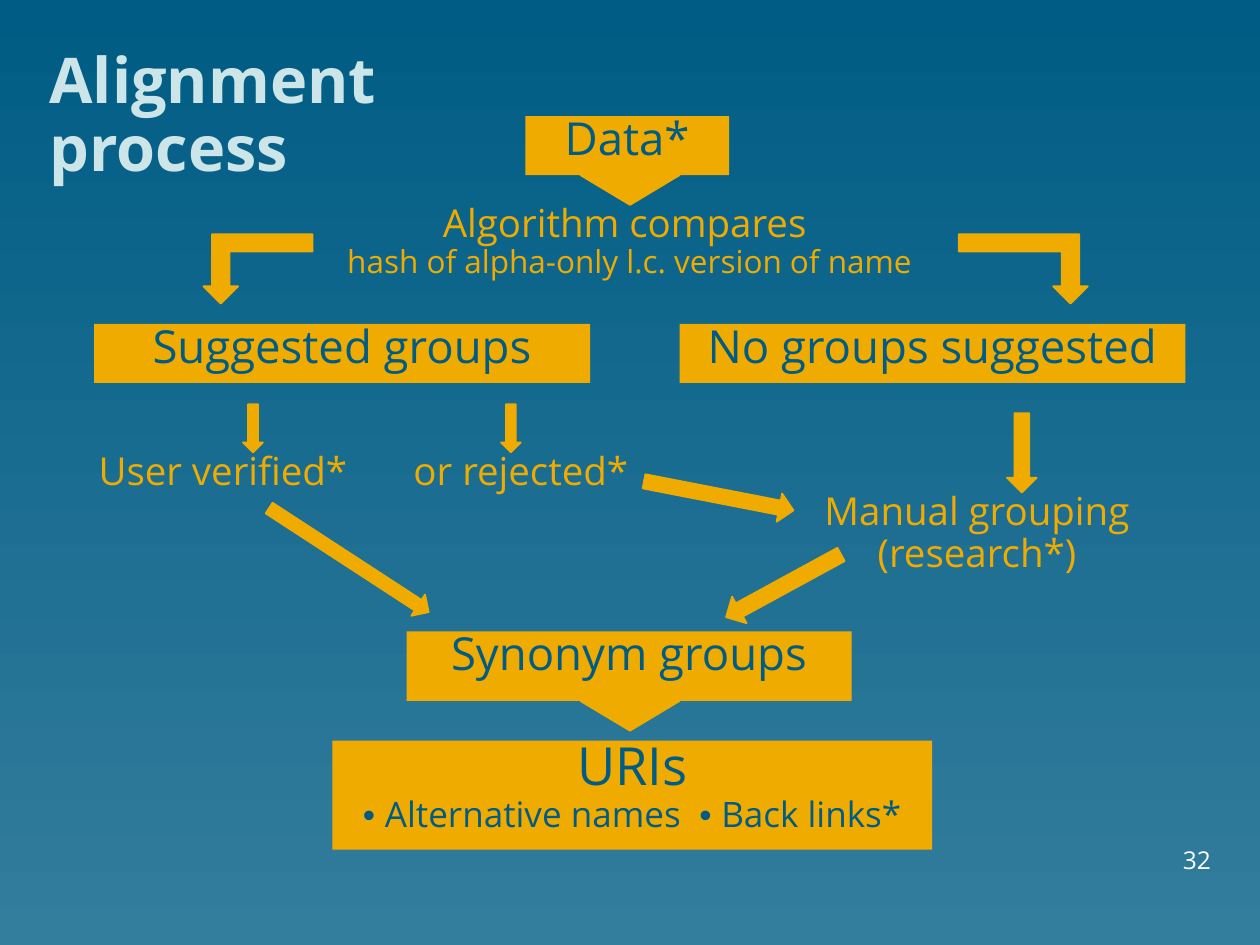
"""Build the slide that charts the alignment process."""
import pptx
import pptx.dml.color
import pptx.enum.shapes
import pptx.enum.text
import pptx.oxml.ns
import pptx.util

Cm = pptx.util.Cm
Pt = pptx.util.Pt
RGB = pptx.dml.color.RGBColor
KIND = pptx.enum.shapes.MSO_SHAPE
ALIGN = pptx.enum.text.PP_ALIGN
ANCHOR = pptx.enum.text.MSO_ANCHOR

NAVY = RGB(0x00, 0x5C, 0x84)
TEAL = RGB(0x33, 0x7D, 0x9D)
GOLD = RGB(0xF0, 0xAB, 0x00)
PALE = RGB(0xCC, 0xE5, 0xE9)
WHITE = RGB(0xFF, 0xFF, 0xFF)

FRAME = {"margin_left": 0, "margin_right": 0, "margin_top": 0,
         "margin_bottom": 0, "word_wrap": True}
FONT = {"name": "Open Sans", "bold": False}


def put(item, style):
    """Set each attribute in the style on the item."""
    for name, value in style.items():
        setattr(item, name, value)


def write(shape, lines, color, align=ALIGN.CENTER, anchor=ANCHOR.TOP, **font):
    """Write lines of (text, size, font name) runs into one paragraph."""
    frame = shape.text_frame
    put(frame, {**FRAME, "vertical_anchor": anchor})
    para = frame.paragraphs[0]
    put(para, {"alignment": align, "line_spacing": 0.9})
    for row, line in enumerate(lines):
        if row:
            para.add_line_break()
        for text, size, *name in line:
            run = para.add_run()
            run.text = text
            put(run.font, {**FONT, **font, "size": Pt(size)})
            if name:
                run.font.name = name[0]
            run.font.color.rgb = color


def label(slide, place, lines, color=GOLD, **style):
    """Add a text box."""
    box = slide.shapes.add_textbox(*map(Cm, place))
    write(box, lines, color, **style)


def solid(slide, kind, place):
    """Add a gold shape without shadow or outline."""
    shape = slide.shapes.add_shape(kind, *map(Cm, place))
    shape.shadow.inherit = False
    shape.fill.solid()
    shape.fill.fore_color.rgb = GOLD
    shape.line.fill.background()
    return shape


def panel(slide, place, lines):
    """Add a gold box with navy text."""
    write(solid(slide, KIND.RECTANGLE, place), lines, NAVY)


def arrow(slide, kind, place, turn=0, flip=False):
    """Add a gold outlined arrow, turned and mirrored at will."""
    shape = solid(slide, kind, place)
    shape.line.color.rgb = GOLD
    shape.line.width = Pt(1)
    shape.rotation = turn
    if flip:
        shape.element.spPr.find(pptx.oxml.ns.qn("a:xfrm")).set("flipH", "1")


def paint(slide):
    """Fill the background from navy down to teal."""
    fill = slide.background.fill
    fill.gradient()
    fill.gradient_angle = 270
    for stop, color in zip(fill.gradient_stops, (NAVY, TEAL)):
        stop.color.rgb = color


def main():
    """Build and save the slide."""
    deck = pptx.Presentation()
    put(deck, {"slide_width": Cm(25.4), "slide_height": Cm(19.05)})
    slide = deck.slides.add_slide(deck.slide_layouts[6])
    paint(slide)

    label(slide, (1, 0, 23.42, 3.73),
          [[("Alignment ", 36)], [("process", 36)]], PALE,
          align=ALIGN.LEFT, anchor=ANCHOR.BOTTOM, bold=True)
    label(slide, (19.1, 17.12, 5.31, 0.51), [[("32", 14)]], WHITE,
          align=ALIGN.RIGHT, anchor=ANCHOR.BOTTOM)

    for text, place in (
            ("Data*", (10.59, 2.34, 4.11, 1.19)),
            ("Suggested groups", (1.9, 6.53, 10, 1.19)),
            ("No groups suggested", (13.7, 6.53, 10.2, 1.19)),
            ("Synonym groups", (8.2, 12.73, 8.97, 1.4))):
        panel(slide, place, [[(text, 26)]])
    panel(slide, (6.7, 14.93, 12.09, 2.2), [
        [("URIs", 30)],
        [("• ", 20, "Arial"), ("Alternative names  ", 20),
         ("• ", 20, "Arial"), ("Back links*", 20)]])

    label(slide, (5.1, 4.12, 15.19, 2.39), [
        [("Algorithm compares ", 22)],
        [("hash of alpha-only l.c. version of name", 18)]])
    for text, place in (
            ("User verified*", (1.7, 9.12, 5.59, 1.4)),
            ("or rejected*", (8.1, 9.12, 4.8, 1.4)),
            ("Manual grouping (research*)", (16.1, 9.93, 7.19, 2.2))):
        label(slide, place, [[(text, 22)]])

    for top in (3.53, 14.13):
        arrow(slide, KIND.ISOSCELES_TRIANGLE, (11.7, top, 2, 0.6), 180)
    arrow(slide, KIND.BENT_UP_ARROW, (4.1, 4.72, 2.2, 1.4), 180)
    arrow(slide, KIND.BENT_UP_ARROW, (19.33, 4.72, 2.6, 1.4), 180, True)
    for place, turn in (
            ((4.9, 8.15, 0.4, 0.97), 0),
            ((10.1, 8.15, 0.4, 0.97), 0),
            ((20.3, 8.33, 0.6, 1.6), 0),
            ((6.78, 9.37, 0.51, 3.84), 303.1),
            ((14.2, 8.46, 0.58, 3.07), 281),
            ((15.49, 10.49, 0.61, 2.64), 61.4)):
        arrow(slide, KIND.DOWN_ARROW, place, turn)

    deck.save("out.pptx")


if __name__ == "__main__":
    main()
